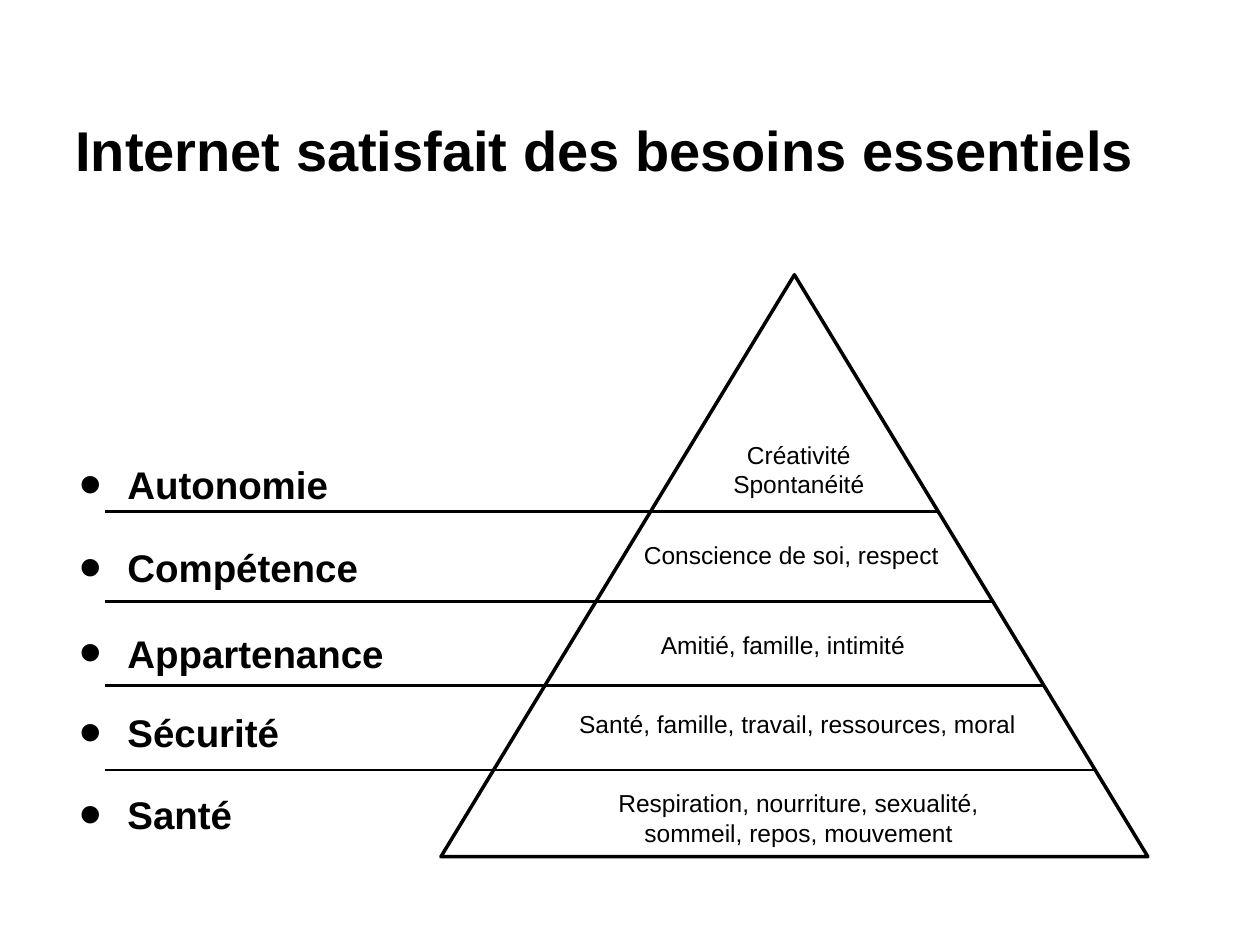
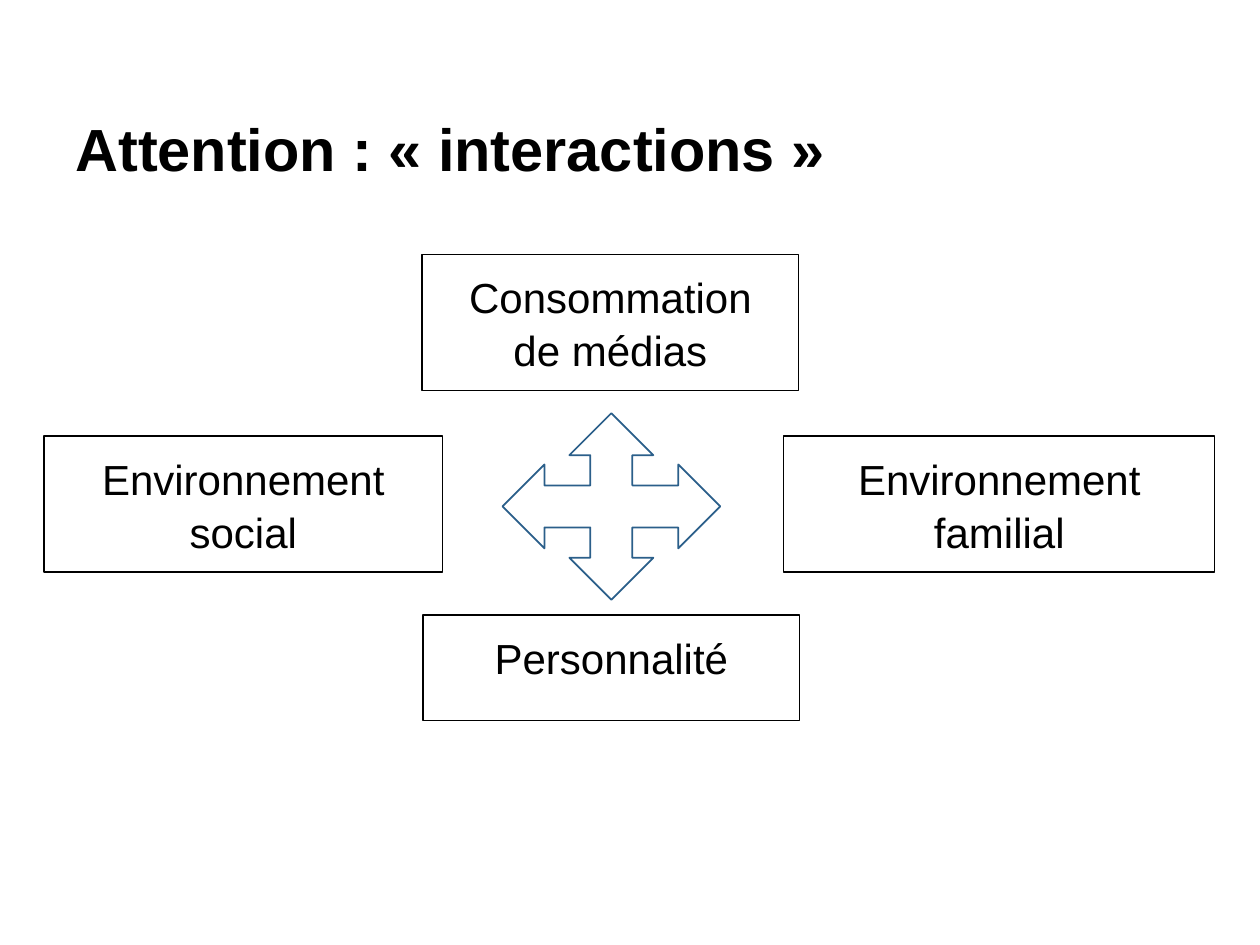
from dataclasses import dataclass

from lxml import etree
from pptx import Presentation
from pptx.dml.color import RGBColor
from pptx.enum.shapes import MSO_CONNECTOR, MSO_SHAPE
from pptx.enum.text import MSO_ANCHOR, PP_ALIGN
from pptx.oxml.ns import qn
from pptx.util import Cm, Pt

LEFT, CENTER = PP_ALIGN.LEFT, PP_ALIGN.CENTER
TOP, BOTTOM = MSO_ANCHOR.TOP, MSO_ANCHOR.BOTTOM
RECTANGLE = MSO_SHAPE.RECTANGLE
TRIANGLE = MSO_SHAPE.ISOSCELES_TRIANGLE
QUAD_ARROW = MSO_SHAPE.QUAD_ARROW
STRAIGHT = MSO_CONNECTOR.STRAIGHT


@dataclass(frozen=True)
class Theme:
    """Colours, font and type sizes shared by the slides."""
    font: str = "Arial"
    ink: RGBColor = RGBColor(0, 0, 0)
    paper: RGBColor = RGBColor(255, 255, 255)
    accent: RGBColor = RGBColor(0x2B, 0x5F, 0x8A)
    label: int = 22
    detail: int = 14
    factor: int = 24
    bullet_percent: int = 167


class DeckBuilder:
    """Holds the theme and draws on the current slide."""

    def __init__(self, theme):
        """Open a deck of 4:3 pages."""
        self.theme = theme
        self.deck = Presentation()
        self.deck.slide_width, self.deck.slide_height = Cm(25.4), Cm(19.05)
        self.page = None

    def new_page(self, title, size):
        """Start a blank page with a bold title."""
        self.page = self.deck.slides.add_slide(self.deck.slide_layouts[6])
        box = self.text((1.27, 0.76, 22.86, 3.18), title, size, bold=True)
        box.text_frame.vertical_anchor = BOTTOM
        box.text_frame.margin_bottom = Cm(0.25)

    def fill_text(self, shape, text, size, bold=False, align=LEFT):
        """Put text in a shape and format its runs."""
        frame = shape.text_frame
        frame.word_wrap = True
        frame.vertical_anchor = TOP
        frame.text = text
        for para in frame.paragraphs:
            para.alignment = align
            for span in para.runs:
                span.font.name = self.theme.font
                span.font.size = Pt(size)
                span.font.bold = bold
                span.font.color.rgb = self.theme.ink

    def text(self, area, text, size, bold=False, align=LEFT):
        """Add a text box."""
        box = self.page.shapes.add_textbox(*map(Cm, area))
        self.fill_text(box, text, size, bold, align)
        return box

    def bullet(self, area, text):
        """Add a bold label with a large bullet."""
        box = self.text(area, text, self.theme.label, bold=True)
        properties = box.text_frame.paragraphs[0]._p.get_or_add_pPr()
        properties.set("marL", str(Cm(0.97)))
        properties.set("indent", str(-Cm(0.97)))
        for tag, key, value in (
            ("a:buSzPct", "val", str(self.theme.bullet_percent * 1000)),
            ("a:buFont", "typeface", self.theme.font),
            ("a:buChar", "char", "•"),
        ):
            etree.SubElement(properties, qn(tag)).set(key, value)

    def shape(self, kind, area, color, width, fill=None):
        """Add an outlined preset shape."""
        shape = self.page.shapes.add_shape(kind, *map(Cm, area))
        shape.shadow.inherit = False
        shape.line.color.rgb = color
        shape.line.width = Pt(width)
        if fill is None:
            shape.fill.background()
        else:
            shape.fill.solid()
            shape.fill.fore_color.rgb = fill
        return shape

    def factor(self, area, text):
        """Add a framed box with centred text."""
        box = self.shape(RECTANGLE, area, self.theme.ink, 0.75)
        self.fill_text(box, text, self.theme.factor, align=CENTER)
        box.text_frame.margin_top = Cm(0.3)
        for para in box.text_frame.paragraphs:
            para.line_spacing = 1.05

    def divider(self, start, end, y):
        """Add a horizontal line."""
        line = self.page.shapes.add_connector(
            STRAIGHT, Cm(start), Cm(y), Cm(end), Cm(y))
        line.line.color.rgb = self.theme.ink
        line.line.width = Pt(1.5)
        etree.SubElement(line._element.spPr, qn("a:effectLst"))


def build_needs(builder):
    """Draw the pyramid of needs."""
    builder.new_page("Internet satisfait des besoins essentiels", 32)
    left, top, width, height = pyramid = (8.89, 5.54, 14.25, 11.73)
    builder.shape(TRIANGLE, pyramid, builder.theme.ink, 2)
    levels = (
        ("Autonomie", 9.17, "Créativité\nSpontanéité",
         (14.3, 8.74, 3.61, 1.45), CENTER),
        ("Compétence", 10.85, "Conscience de soi, respect",
         (12.73, 10.77, 13.16, 0.86), LEFT),
        ("Appartenance", 12.57, "Amitié, famille, intimité",
         (12.09, 12.57, 7.39, 0.86), CENTER),
        ("Sécurité", 14.17, "Santé, famille, travail, ressources, moral",
         (9.5, 14.17, 13.16, 0.86), CENTER),
        ("Santé", 15.82,
         "Respiration, nourriture, sexualité,\vsommeil, repos, mouvement",
         (9.52, 15.77, 13.16, 1.45), CENTER),
    )
    for need, label_top, detail, area, align in levels:
        builder.bullet((1.35, label_top, 14.15, 1.19), need)
        builder.text(area, detail, builder.theme.detail, align=align)
    for y in (10.31, 12.12, 13.82, 15.52):
        right_edge = left + width / 2 * (1 + (y - top) / height)
        builder.divider(2.11, right_edge, y)


def build_interactions(builder):
    """Draw four factors around a four-way arrow."""
    builder.new_page("Attention : « interactions »", 34)
    factors = (
        ("Environnement\nsocial", (0.89, 8.79, 8.03, 2.74)),
        ("Environnement\nfamilial", (15.8, 8.79, 8.69, 2.74)),
        ("Personnalité", (8.53, 12.4, 7.59, 2.13)),
        ("Consommation\vde médias", (8.51, 5.13, 7.59, 2.74)),
    )
    for name, area in factors:
        builder.factor(area, name)
    builder.shape(QUAD_ARROW, (10.13, 8.33, 4.39, 3.76),
                  builder.theme.accent, 1, builder.theme.paper)


def main():
    """Build and save the deck."""
    builder = DeckBuilder(Theme())
    build_needs(builder)
    build_interactions(builder)
    builder.deck.save("out.pptx")


if __name__ == "__main__":
    main()
